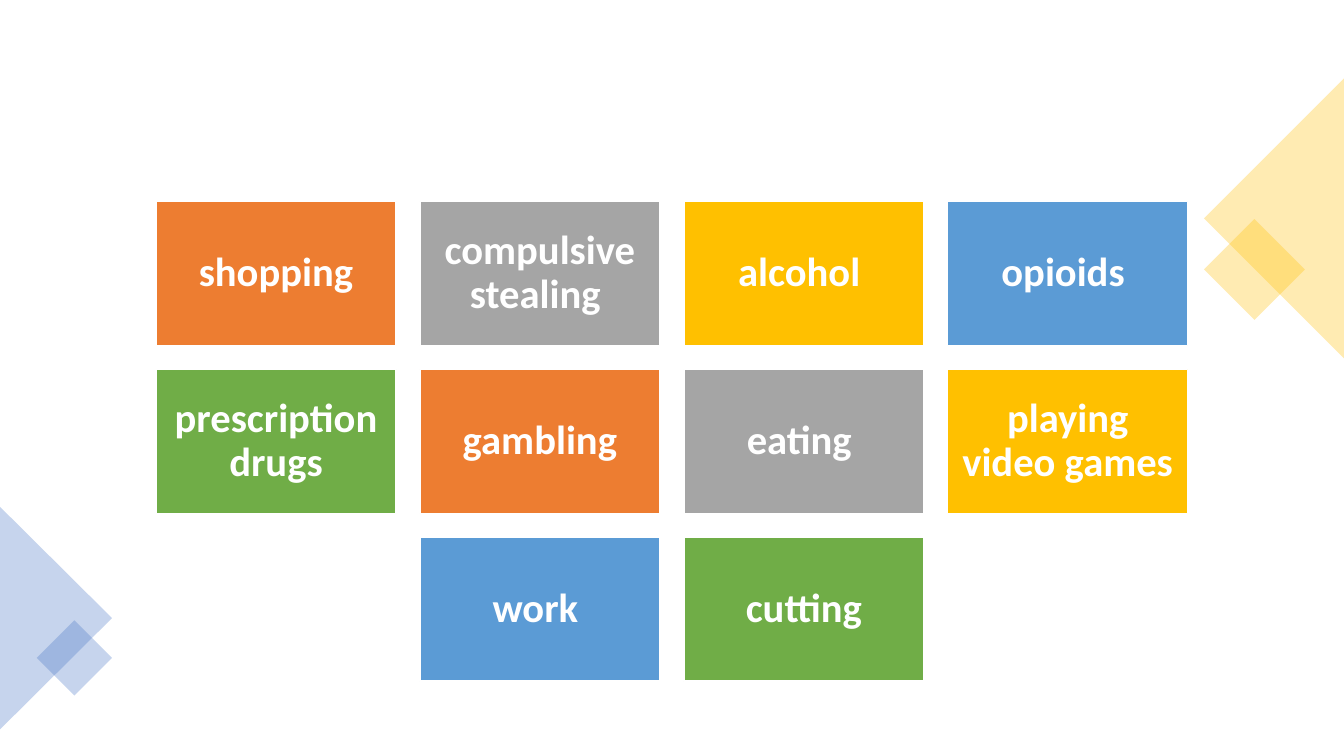
from dataclasses import dataclass

from lxml.etree import SubElement
from pptx import Presentation
from pptx.dml.color import RGBColor
from pptx.enum.shapes import MSO_SHAPE as Shape
from pptx.enum.text import MSO_ANCHOR as Anchor, PP_ALIGN as Align
from pptx.oxml.ns import qn
from pptx.util import Pt


@dataclass(frozen=True)
class Theme:
    font: str = "Calibri"
    card_size: float = 29
    white: str = "FFFFFF"
    gold: str = "FFC000"
    navy: str = "4472C4"
    cards: tuple = ("ED7D31", "A5A5A5", "FFC000", "5B9BD5", "70AD47")
    corner_alpha: int = 30


THEME = Theme()
WIDTH, HEIGHT = 960, 540
ROWS = [
    ["shopping", "compulsive stealing ", "alcohol ", "opioids "],
    ["prescription drugs", "gambling", "eating ", "playing video games"],
    ["work ", "cutting"],
]


def add_block(page, kind, box, color):
    """Add a plain filled shape in box (left, top, width, height)."""
    block = page.shapes.add_shape(kind, *map(Pt, box))
    block.shadow.inherit = False
    block.fill.solid()
    block.fill.fore_color.rgb = RGBColor.from_string(color)
    block.line.fill.background()
    return block


def add_ornament(page, kind, center, size, turn, color):
    """Add a rotated, translucent shape around its center."""
    (x, y), (width, height) = center, size
    ornament = add_block(page, kind, (x - width / 2, y - height / 2, width, height), color)
    ornament.rotation = turn
    tint = ornament.fill._xPr.find(qn("a:solidFill"))[0]
    SubElement(tint, qn("a:alpha")).set("val", str(THEME.corner_alpha * 1000))


def add_corner(page, box, diamond_side, diamond_drop, color):
    """Add a triangle that points inward from the slide edge, and a diamond level with its tip."""
    left, top, depth, base = box
    points_right = left == 0
    middle = top + base / 2
    half_diagonal = diamond_side / 2 ** 0.5
    diamond_x = left + depth - half_diagonal if points_right else left + half_diagonal
    add_ornament(page, Shape.ISOSCELES_TRIANGLE, (left + depth / 2, middle),
                 (base, depth), 90 if points_right else 270, color)
    add_ornament(page, Shape.RECTANGLE, (diamond_x, middle + diamond_drop),
                 (diamond_side, diamond_side), 45, color)


def add_card(page, box, text, color):
    """Add one coloured card with a centred label."""
    card = add_block(page, Shape.RECTANGLE, box, color)
    card.line.color.rgb = RGBColor.from_string(THEME.white)
    card.line.width = Pt(1)
    frame = card.text_frame
    frame.word_wrap = True
    frame.vertical_anchor = Anchor.MIDDLE
    frame.margin_left = frame.margin_right = Pt(8.7)
    frame.margin_top = frame.margin_bottom = Pt(8.7)
    para = frame.paragraphs[0]
    para.text = text
    para.alignment = Align.CENTER
    para.line_spacing = 0.9
    para.font.name = THEME.font
    para.font.size = Pt(THEME.card_size)
    para.font.bold = True
    para.font.color.rgb = RGBColor.from_string(THEME.white)


def add_card_grid(page, box, rows, gap):
    """Fill box with rows of equal cards; short rows are centred."""
    left, top, width, height = box
    columns = max(map(len, rows))
    card_width = (width - gap * (columns - 1)) / columns
    card_height = (height - gap * (len(rows) - 1)) / len(rows)
    count = 0
    for row, labels in enumerate(rows):
        indent = (columns - len(labels)) * (card_width + gap) / 2
        for column, label in enumerate(labels):
            x = left + indent + column * (card_width + gap)
            y = top + row * (card_height + gap)
            color = THEME.cards[count % len(THEME.cards)]
            add_card(page, (x, y, card_width, card_height), label, color)
            count += 1


def main():
    deck = Presentation()
    deck.slide_width, deck.slide_height = Pt(WIDTH), Pt(HEIGHT)
    page = deck.slides.add_slide(deck.slide_layouts[6])

    # Edge ornaments
    add_corner(page, (WIDTH - 100, 56, 100, 200), 51, 36.5, THEME.gold)
    add_corner(page, (0, 362, 80, 159), 38, 28.5, THEME.navy)

    # Cards
    add_card_grid(page, (111.5, 144, 737, 342.5), ROWS, 17)

    deck.save("out.pptx")


if __name__ == "__main__":
    main()
